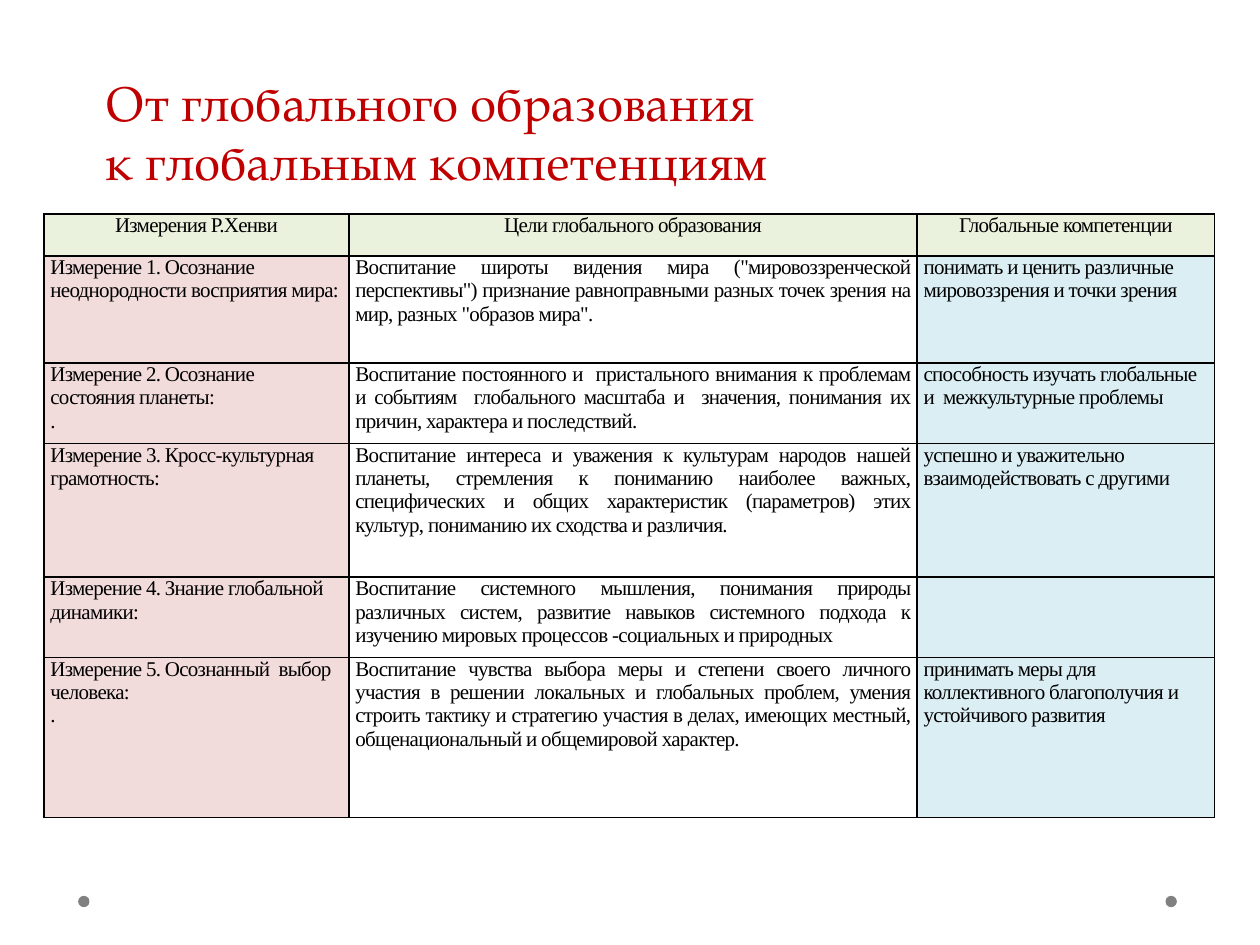
from lxml.etree import SubElement
from pptx import Presentation
from pptx.dml.color import RGBColor
from pptx.enum.shapes import MSO_SHAPE
from pptx.enum.text import MSO_ANCHOR, PP_ALIGN
from pptx.oxml.ns import qn
from pptx.util import Inches, Pt

RED = RGBColor(0xC0, 0x00, 0x00)
BLACK = RGBColor(0x00, 0x00, 0x00)
GREY = RGBColor(0x80, 0x80, 0x80)
GREEN = RGBColor(0xEA, 0xF1, 0xDD)
PINK = RGBColor(0xF2, 0xDB, 0xDB)
BLUE = RGBColor(0xDA, 0xEE, 0xF3)

TITLE_FONT = {"name": "TeX Gyre Pagella", "size": Pt(28), "bold": False}
CELL_FONT = {"name": "Times New Roman", "size": Pt(12), "bold": False}
CELL_MARGINS = {"margin_left": Inches(0.05), "margin_right": Inches(0.05),
                "margin_top": 0, "margin_bottom": 0}
TITLE_FRAME = {"margin_left": Inches(0.1), "margin_right": Inches(0.1),
               "margin_top": Inches(0.05), "margin_bottom": Inches(0.05),
               "vertical_anchor": MSO_ANCHOR.MIDDLE, "word_wrap": True}

COLUMN_WIDTHS = [2.42, 4.51, 2.36]
COLUMN_FILLS = [PINK, None, BLUE]
COLUMN_ALIGNS = [PP_ALIGN.LEFT, PP_ALIGN.JUSTIFY, PP_ALIGN.LEFT]
ROW_HEIGHTS = [0.33, 0.85, 0.64, 1.06, 0.64, 1.27]
ROWS = [
    ["Измерения Р.Хенви", "Цели глобального образования", "Глобальные компетенции"],
    ["Измерение 1. Осознание неоднородности восприятия мира:",
     "Воспитание широты видения мира (\"мировоззренческой перспективы\") признание "
     "равноправными разных точек зрения на мир, разных \"образов мира\".",
     "понимать и ценить различные мировоззрения и точки зрения"],
    ["Измерение 2. Осознание состояния планеты:\n.",
     "Воспитание постоянного и  пристального внимания к проблемам и событиям  "
     "глобального масштаба и  значения, понимания их причин, характера и последствий.",
     "способность изучать глобальные и  межкультурные проблемы"],
    ["Измерение 3. Кросс-культурная грамотность:",
     "Воспитание интереса и уважения к культурам народов нашей планеты, стремления "
     "к пониманию наиболее важных, специфических и общих характеристик (параметров) "
     "этих культур, пониманию их сходства и различия.",
     "успешно и уважительно взаимодействовать с другими"],
    ["Измерение 4. Знание глобальной динамики:",
     "Воспитание системного мышления, понимания природы различных систем, развитие "
     "навыков системного подхода к изучению мировых процессов -социальных и природных",
     ""],
    ["Измерение 5. Осознанный  выбор человека:\n.",
     "Воспитание чувства выбора меры и степени своего личного участия в решении "
     "локальных и глобальных проблем, умения строить тактику и стратегию участия в "
     "делах, имеющих местный, общенациональный и общемировой характер.",
     "принимать меры для коллективного благополучия и устойчивого развития"],
]


def apply_format(target, values):
    for name, value in values.items():
        setattr(target, name, value)


def add_title(page, text):
    title = page.shapes.title
    apply_format(title, {"left": Inches(0.74), "top": Inches(0.52),
                         "width": Inches(8.35), "height": Inches(1.04)})
    frame = title.text_frame
    apply_format(frame, TITLE_FRAME)
    frame.text = text
    paragraph = frame.paragraphs[0]
    paragraph.alignment = PP_ALIGN.LEFT
    for span in paragraph.runs:
        apply_format(span.font, TITLE_FONT)
        span.font.color.rgb = RED


def add_dot(page, left):
    dot = page.shapes.add_shape(MSO_SHAPE.OVAL, Inches(left), Inches(7.11),
                                Inches(0.09), Inches(0.09))
    dot.shadow.inherit = False
    dot.fill.solid()
    dot.fill.fore_color.rgb = GREY
    dot.line.fill.background()


def add_borders(cell):
    properties = cell._tc.get_or_add_tcPr()
    for side in ("a:lnL", "a:lnR", "a:lnT", "a:lnB"):
        line = SubElement(properties, qn(side), w=str(Pt(1)))
        solid = SubElement(line, qn("a:solidFill"))
        SubElement(solid, qn("a:srgbClr"), val=str(BLACK))


def fill_cell(cell, text, color, alignment):
    add_borders(cell)
    apply_format(cell, CELL_MARGINS)
    if color is None:
        cell.fill.background()
    else:
        cell.fill.solid()
        cell.fill.fore_color.rgb = color
    cell.text = text
    for paragraph in cell.text_frame.paragraphs:
        paragraph.alignment = alignment
        for span in paragraph.runs:
            apply_format(span.font, CELL_FONT)
            span.font.color.rgb = BLACK
            # Slightly tightened letters, in hundredths of a point
            span.font._element.set("spc", "-40")


def add_competence_table(page):
    table = page.shapes.add_table(
        len(ROWS), len(COLUMN_WIDTHS), Inches(0.35), Inches(1.7),
        Inches(sum(COLUMN_WIDTHS)), Inches(sum(ROW_HEIGHTS))).table
    table.first_row = False
    table.horz_banding = False
    for column, width in zip(table.columns, COLUMN_WIDTHS):
        column.width = Inches(width)
    for row_index, (row, height) in enumerate(zip(table.rows, ROW_HEIGHTS)):
        row.height = Inches(height)
        for column_index, text in enumerate(ROWS[row_index]):
            color, alignment = COLUMN_FILLS[column_index], COLUMN_ALIGNS[column_index]
            if row_index == 0:
                color, alignment = GREEN, PP_ALIGN.CENTER
            fill_cell(row.cells[column_index], text, color, alignment)


def main():
    deck = Presentation()
    deck.slide_width, deck.slide_height = Inches(10), Inches(7.5)
    page = deck.slides.add_slide(deck.slide_layouts[5])

    # Footer dots
    for left in (9.25, 0.62):
        add_dot(page, left)

    # Table and heading
    add_competence_table(page)
    add_title(page, "От глобального образования \vк глобальным компетенциям")

    deck.save("out.pptx")


if __name__ == "__main__":
    main()
